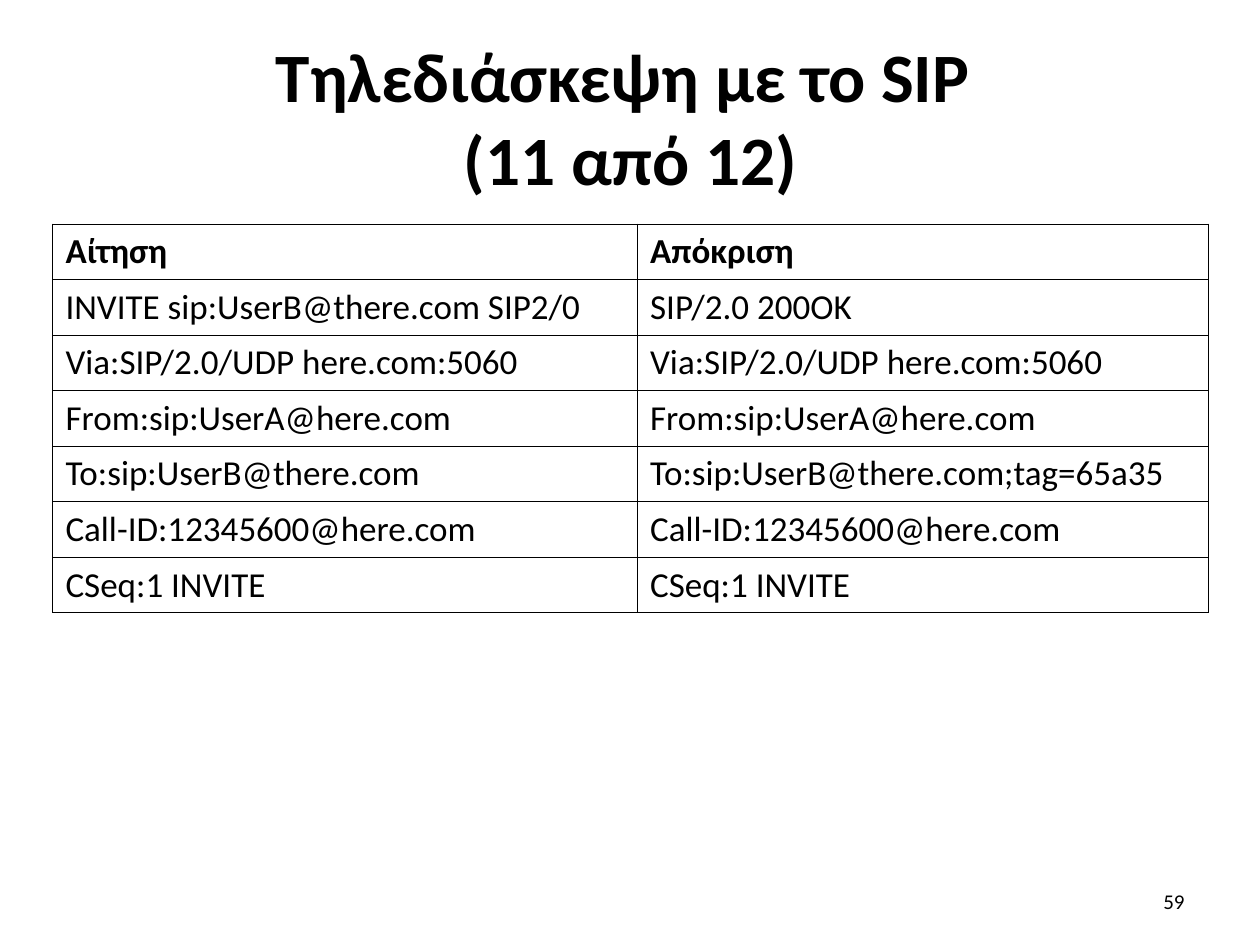
"""Build the SIP teleconference slide with its request and response table."""
from lxml import etree
from pptx import Presentation
from pptx.dml.color import RGBColor
from pptx.enum.text import MSO_ANCHOR, MSO_AUTO_SIZE, PP_ALIGN
from pptx.oxml.ns import qn
from pptx.util import Inches, Pt

LEFT, CENTER, RIGHT = PP_ALIGN.LEFT, PP_ALIGN.CENTER, PP_ALIGN.RIGHT
TOP, MIDDLE = MSO_ANCHOR.TOP, MSO_ANCHOR.MIDDLE
NO_FIT = MSO_AUTO_SIZE.NONE

TITLE = "Τηλεδιάσκεψη με το SIP \v(11 από 12)"
ROWS = [
    ("Αίτηση", "Απόκριση"),
    ("INVITE sip:UserB@there.com SIP2/0", "SIP/2.0 200OK"),
    ("Via:SIP/2.0/UDP here.com:5060", "Via:SIP/2.0/UDP here.com:5060"),
    ("From:sip:UserA@here.com", "From:sip:UserA@here.com"),
    ("To:sip:UserB@there.com", "To:sip:UserB@there.com;tag=65a35"),
    ("Call-ID:12345600@here.com", "Call-ID:12345600@here.com"),
    ("CSeq:1 INVITE", "CSeq:1 INVITE"),
]
PAGE = "59"
COLORS = {"text": "000000", "border": "000000"}
FONT = "Calibri"
COL_WIDTHS = (4.64, 4.53)
ROW_HEIGHT = 0.39
INDENT = 0.38


def write(tf, text, size=20, bold=False, align=LEFT, indent=0):
    p = tf.paragraphs[0]
    p.text = text
    p.alignment = align
    if indent:
        pPr = p._p.get_or_add_pPr()
        pPr.set("marL", str(Inches(indent)))
        pPr.set("indent", str(-Inches(indent)))
    for r in p.runs:
        r.font.name = FONT
        r.font.size = Pt(size)
        r.font.bold = bold
        r.font.color.rgb = RGBColor.from_string(COLORS["text"])


def add_borders(cell, width=0.75):
    tcPr = cell._tc.get_or_add_tcPr()
    for i, side in enumerate(("lnL", "lnR", "lnT", "lnB")):
        ln = etree.Element(qn(f"a:{side}"), w=str(Pt(width)))
        fill = etree.SubElement(ln, qn("a:solidFill"))
        etree.SubElement(fill, qn("a:srgbClr"), val=COLORS["border"])
        tcPr.insert(i, ln)


def place(sp, left, top, width, height):
    sp.left, sp.top = Inches(left), Inches(top)
    sp.width, sp.height = Inches(width), Inches(height)
    tf = sp.text_frame
    tf.word_wrap = True
    tf.auto_size = NO_FIT
    tf.vertical_anchor = MIDDLE
    return tf


def add_message_table(s):
    table = s.shapes.add_table(
        len(ROWS), len(COL_WIDTHS), Inches(0.42), Inches(1.78),
        Inches(sum(COL_WIDTHS)), Inches(ROW_HEIGHT * len(ROWS))).table
    table.first_row = table.horz_banding = False
    for col, width in zip(table.columns, COL_WIDTHS):
        col.width = Inches(width)
    for i, texts in enumerate(ROWS):
        for j, text in enumerate(texts):
            cell = table.cell(i, j)
            cell.fill.background()
            cell.vertical_anchor = MIDDLE if i == len(ROWS) - 1 else TOP
            write(cell.text_frame, text, bold=i == 0, indent=INDENT if i else 0)
            add_borders(cell)


def main():
    prs = Presentation()
    prs.slide_width, prs.slide_height = Inches(10), Inches(7.5)
    s = prs.slides.add_slide(prs.slide_layouts[5])
    write(place(s.shapes.title, 0.42, 0.32, 9.17, 1.21), TITLE,
          size=39.6, bold=True, align=CENTER)
    add_message_table(s)
    number = s.shapes.add_textbox(0, 0, 0, 0)
    write(place(number, 7.17, 6.95, 2.33, 0.4), PAGE, size=12, align=RIGHT)
    prs.save("out.pptx")


if __name__ == "__main__":
    main()
